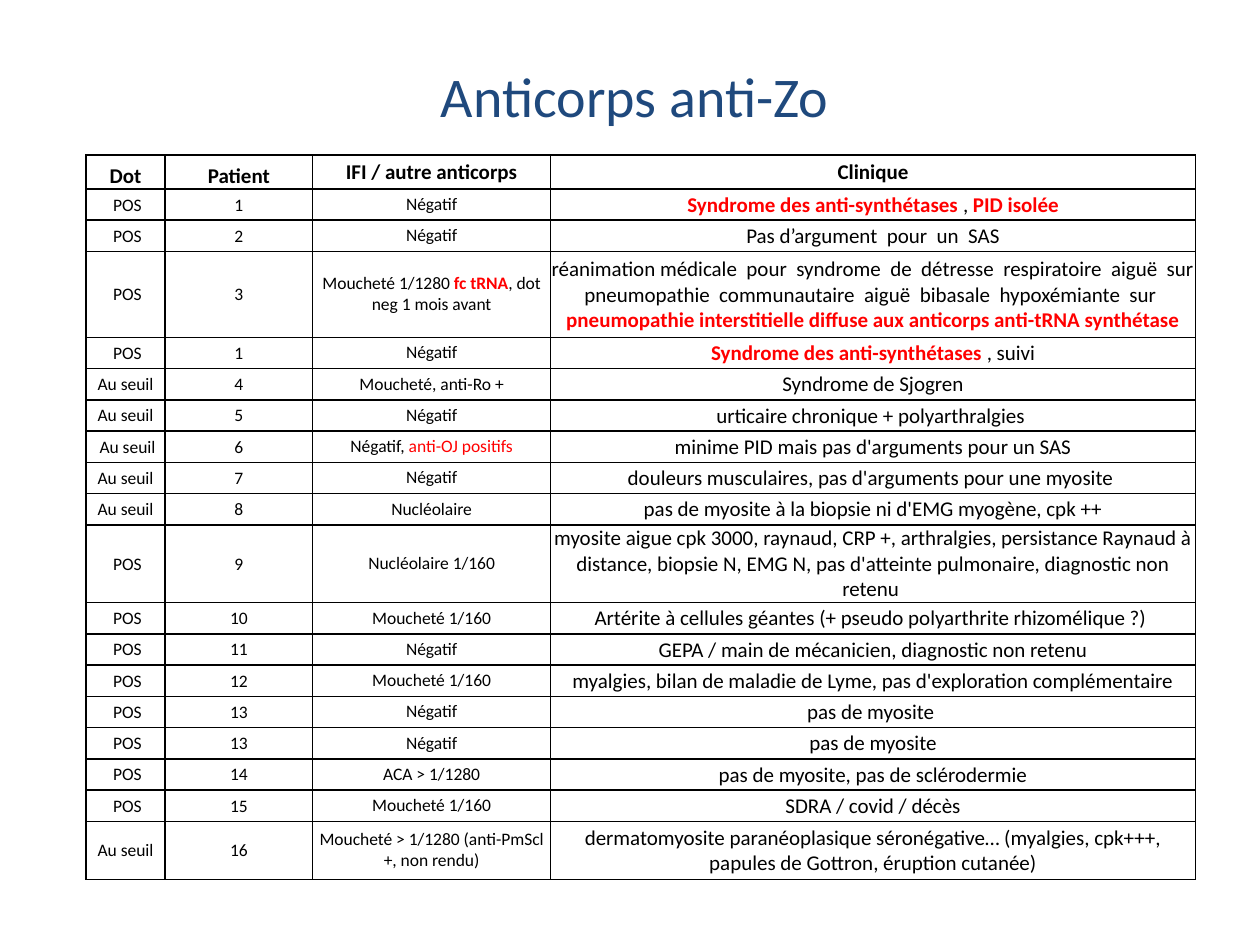
from lxml.etree import SubElement
from pptx import Presentation
from pptx.dml.color import RGBColor
from pptx.enum.text import MSO_ANCHOR, PP_ALIGN
from pptx.oxml.ns import qn
from pptx.util import Cm, Pt

BLACK, RED, NAVY = "000000", "FF0000", "1F497D"
POS, SEUIL, NEG, MOUCH = " POS", "Au seuil", "Négatif", "Moucheté 1/160"
HEAD = ["Dot", "Patient", "IFI / autre anticorps", "Clinique"]
WIDTHS = [1.6, 2.97, 4.8, 13]
LOW, MID, HIGH = 0.63, 1.17, 1.73


def red(text, bold=True):
    return text, RED, bold


ROWS = [
    (POS, "1", NEG, [red("Syndrome des anti-synthétases "), ", ", red("PID isolée")]),
    (POS, "2", NEG, "Pas d’argument  pour  un  SAS"),
    (POS, "3", ["Moucheté 1/1280 ", red("fc tRNA"), ", dot neg 1 mois avant"],
     ["réanimation médicale  pour  syndrome  de  détresse  respiratoire  aiguë  "
      "sur pneumopathie  communautaire  aiguë  bibasale  hypoxémiante  sur  ",
      red("pneumopathie interstitielle diffuse aux anticorps anti-tRNA synthétase")]),
    (POS, "1", NEG, [red("Syndrome des anti-synthétases "), ", suivi"]),
    (SEUIL, "4", "Moucheté, anti-Ro +", "Syndrome de Sjogren"),
    (SEUIL, "5", NEG, "urticaire chronique + polyarthralgies "),
    (" Au seuil", "6", ["Négatif, ", red("anti-OJ positifs", False)],
     "minime PID mais pas d'arguments pour un SAS"),
    (SEUIL, "7", NEG, "douleurs musculaires, pas d'arguments pour une myosite "),
    (SEUIL, "8", "Nucléolaire", "pas de myosite à la biopsie ni d'EMG myogène, cpk ++"),
    (POS, "9", "Nucléolaire 1/160",
     "myosite aigue cpk 3000, raynaud, CRP +, arthralgies, persistance Raynaud à distance, "
     "biopsie N, EMG N, pas d'atteinte pulmonaire, diagnostic non retenu "),
    (POS, "10", MOUCH, "Artérite à cellules géantes (+ pseudo polyarthrite rhizomélique ?) "),
    (POS, "11", NEG, "GEPA / main de mécanicien, diagnostic non retenu"),
    (POS, "12", MOUCH, "myalgies, bilan de maladie de Lyme, pas d'exploration complémentaire"),
    (POS, "13", NEG, "pas de myosite "),
    (POS, "13", NEG, "pas de myosite"),
    (POS, "14", "ACA > 1/1280", "pas de myosite, pas de sclérodermie"),
    (POS, "15", MOUCH, "SDRA / covid / décès"),
    (SEUIL, "16", "Moucheté > 1/1280 (anti-PmScl +, non rendu)",
     "dermatomyosite paranéoplasique séronégative… (myalgies, cpk+++, "
     "papules de Gottron, éruption cutanée)"),
]
HEIGHTS = {0: 0.69, 3: HIGH, 10: MID, 18: MID}


def paint(font, color):
    font.color.rgb = RGBColor.from_string(color)


def write(frame, parts, size, bold=False):
    para = frame.paragraphs[0]
    para.alignment = PP_ALIGN.CENTER
    for part in [parts] if isinstance(parts, str) else parts:
        text, color, heavy = (part, BLACK, bold) if isinstance(part, str) else part
        run = para.add_run()
        run.text = text
        run.font.name = "Calibri"
        run.font.size = Pt(size)
        run.font.bold = heavy
        paint(run.font, color)


def frame_cell(cell):
    props = cell._tc.get_or_add_tcPr()
    for side in ("a:lnL", "a:lnR", "a:lnT", "a:lnB"):
        line = SubElement(props, qn(side), w=str(Pt(1)))
        fill = SubElement(line, qn("a:solidFill"))
        SubElement(fill, qn("a:srgbClr"), val=BLACK)
    cell.fill.background()


def add_title(slide, left, top, width, height):
    title = slide.shapes.title
    title.left, title.top, title.width, title.height = map(Cm, (left, top, width, height))
    frame = title.text_frame
    frame.vertical_anchor = MSO_ANCHOR.MIDDLE
    write(frame, [("Anticorps anti-Zo", NAVY, False)], 32)


def add_grid(slide, left, top, width, height):
    rows = [HEAD] + ROWS
    table = slide.shapes.add_table(
        len(rows), len(HEAD), Cm(left), Cm(top), Cm(width), Cm(height)).table
    table.first_row = table.horz_banding = False
    for col, size in zip(table.columns, WIDTHS):
        col.width = Cm(size * width / sum(WIDTHS))
    for i, row in enumerate(rows):
        table.rows[i].height = Cm(HEIGHTS.get(i, LOW))
        for j, parts in enumerate(row):
            cell = table.cell(i, j)
            frame_cell(cell)
            pad = 0 if i == 0 or j == 2 else 0.02
            cell.margin_left = cell.margin_right = cell.margin_top = Cm(pad)
            cell.margin_bottom = 0
            low = i == 0 and j < 2
            cell.vertical_anchor = MSO_ANCHOR.BOTTOM if low else MSO_ANCHOR.MIDDLE
            write(cell.text_frame, parts, 12 if i == 0 or j == 3 else 10, i == 0)


def main():
    deck = Presentation()
    deck.slide_width, deck.slide_height = Cm(25.4), Cm(19.05)
    slide = deck.slides.add_slide(deck.slide_layouts[5])
    add_grid(slide, 1.73, 3.12, 22.37, 14.58)
    add_title(slide, 1.37, 0.33, 22.86, 3.18)
    deck.save("out.pptx")


if __name__ == "__main__":
    main()
